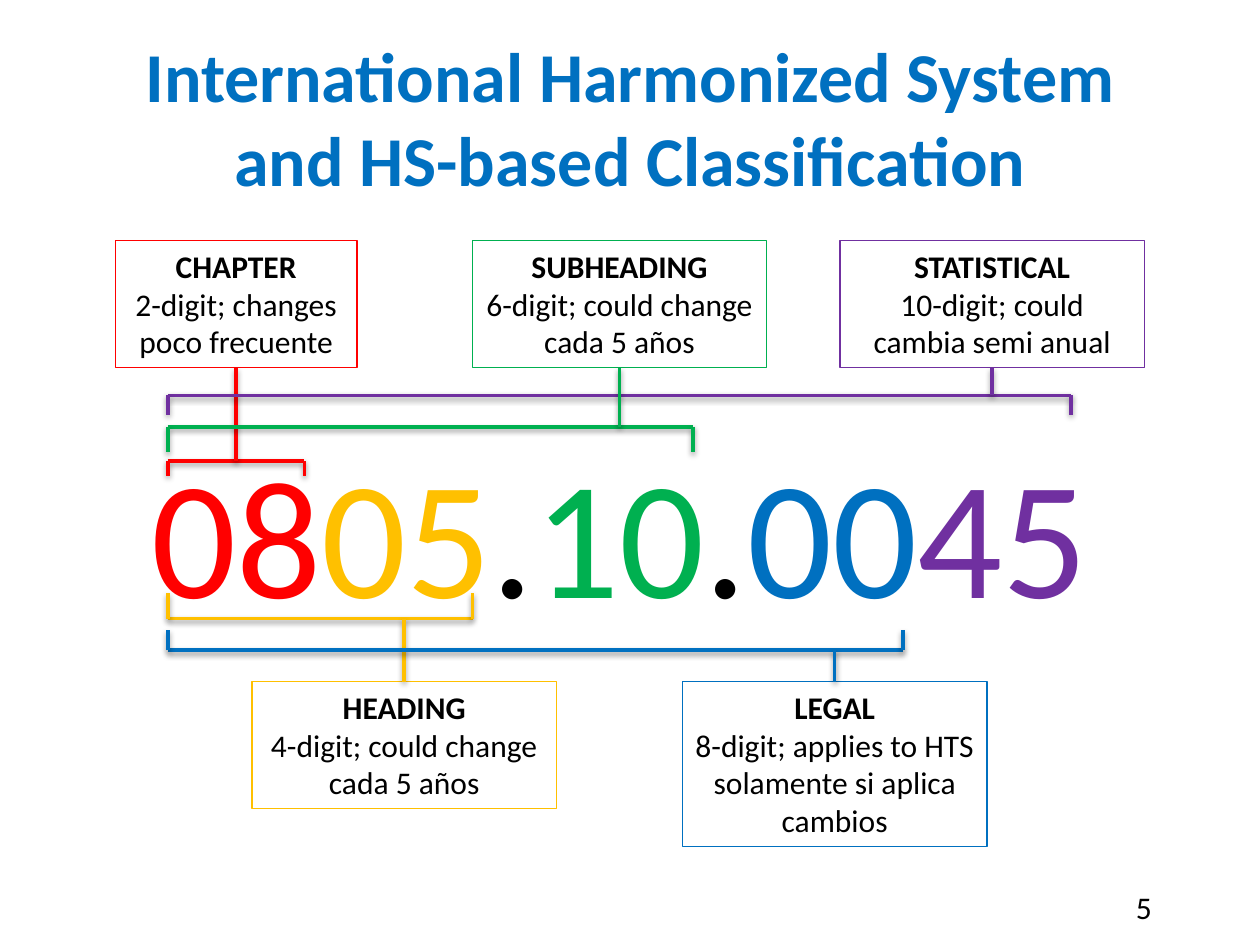
from pptx import Presentation
from pptx.dml.color import RGBColor
from pptx.enum.shapes import MSO_CONNECTOR, MSO_SHAPE
from pptx.enum.text import MSO_ANCHOR, MSO_AUTO_SIZE, PP_ALIGN
from pptx.util import Pt

STRAIGHT = MSO_CONNECTOR.STRAIGHT
RECTANGLE = MSO_SHAPE.RECTANGLE
MIDDLE, TOP = MSO_ANCHOR.MIDDLE, MSO_ANCHOR.TOP
CENTER, LEFT = PP_ALIGN.CENTER, PP_ALIGN.LEFT
FIT_SHAPE = MSO_AUTO_SIZE.SHAPE_TO_FIT_TEXT

FONT = "Calibri"
COLORS = {
    "black": "000000",
    "chapter": "FF0000",
    "heading": "FFC000",
    "subheading": "00B050",
    "legal": "0070C0",
    "statistical": "7030A0",
}
CODE_LEFT = 96
UPPER_TOP, LOWER_TOP = 137.5, 389.5

CODE_PARTS = [
    ("08", "chapter"),
    ("05", "heading"),
    (".", "black"),
    ("10", "subheading"),
    (".", "black"),
    ("00", "legal"),
    ("45", "statistical"),
]
# level, description, label box, bracket right, bracket bar y, bracket tip y
LEVELS = [
    ("chapter", "2-digit; changes poco frecuente",
     (66, UPPER_TOP, 138, 72.7), 174, 263.5, 272),
    ("heading", "4-digit; could change cada 5 años",
     (144, LOWER_TOP, 174, 72.7), 270, 353.5, 339),
    ("statistical", "10-digit; could cambia semi anual",
     (480, UPPER_TOP, 174, 72.7), 612, 226, 237),
    ("subheading", "6-digit; could change cada 5 años",
     (270, UPPER_TOP, 168, 72.7), 396, 244, 258.5),
    ("legal", "8-digit; applies to HTS solamente si aplica cambios",
     (390, LOWER_TOP, 174, 94.3), 516, 371.5, 360),
]


def rgb(name):
    return RGBColor.from_string(COLORS[name])


def format_font(font, size, color, bold=False):
    font.name = FONT
    font.size = Pt(size)
    font.bold = bold
    font.color.rgb = rgb(color)


def add_text(slide, box, text, size, color, bold=False, align=CENTER, anchor=TOP, wrap=True):
    shape = slide.shapes.add_textbox(*map(Pt, box))
    text_frame = shape.text_frame
    text_frame.word_wrap = wrap
    text_frame.vertical_anchor = anchor
    text_frame.text = text
    paragraph = text_frame.paragraphs[0]
    paragraph.alignment = align
    for run in paragraph.runs:
        format_font(run.font, size, color, bold)
    return paragraph


def add_code(slide, box):
    paragraph = add_text(slide, box, "", 96, "black")
    for digits, color in CODE_PARTS:
        run = paragraph.add_run()
        run.text = digits
        format_font(run.font, 96, color)


def add_line(slide, start, end, color):
    line = slide.shapes.add_connector(STRAIGHT, *map(Pt, (*start, *end)))
    line.line.color.rgb = rgb(color)
    line.line.width = Pt(2)
    return line


def add_label(slide, box, level, description):
    label = slide.shapes.add_shape(RECTANGLE, *map(Pt, box))
    label.shadow.inherit = False
    label.fill.background()
    label.line.color.rgb = rgb(level)
    label.line.width = Pt(0.75)
    text_frame = label.text_frame
    text_frame.word_wrap = True
    text_frame.auto_size = FIT_SHAPE
    text_frame.vertical_anchor = TOP
    text_frame.text = f"{level.upper()}\n{description}"
    for index, paragraph in enumerate(text_frame.paragraphs):
        paragraph.alignment = CENTER
        format_font(paragraph.runs[0].font, 18, "black", bold=index == 0)
    return label


def add_level(slide, level, description, box, right, bar, tip):
    add_line(slide, (CODE_LEFT, bar), (right, bar), level)
    for x in (CODE_LEFT, right):
        add_line(slide, (x, bar), (x, tip), level)
    label = add_label(slide, box, level, description)
    left, top, width, height = box
    center = left + width / 2
    is_above = top < bar
    edge = top + height if is_above else top
    stem = add_line(slide, (center, edge), (center, bar), level)
    stem.begin_connect(label, 2 if is_above else 0)


def main():
    presentation = Presentation()
    presentation.slide_width = Pt(720)
    presentation.slide_height = Pt(540)
    slide = presentation.slides.add_slide(presentation.slide_layouts[6])
    add_text(slide, (36, 21.6, 648, 90),
             "International Harmonized System\vand HS-based Classification",
             40, "legal", bold=True, anchor=MIDDLE)
    add_code(slide, (75, 242.5, 558, 124))
    for level in LEVELS:
        add_level(slide, *level)
    add_text(slide, (642, 504, 24, 29), "5", 18, "black", align=LEFT, wrap=False)
    presentation.save("out.pptx")


if __name__ == "__main__":
    main()
